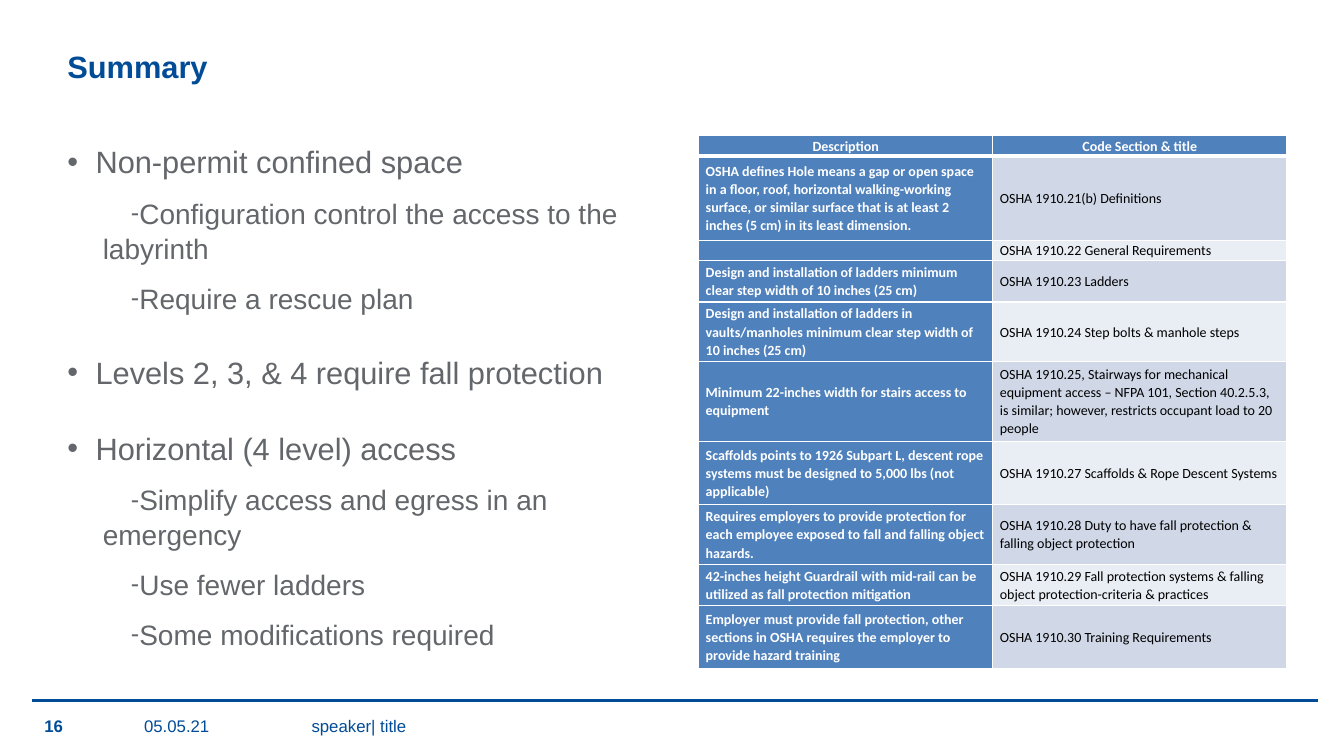
from lxml.etree import SubElement
from pptx import Presentation
from pptx.dml.color import RGBColor
from pptx.enum.shapes import MSO_CONNECTOR as Connector
from pptx.enum.text import MSO_ANCHOR as Anchor, PP_ALIGN as Align
from pptx.oxml.ns import qn
from pptx.util import Cm, Pt

NAVY, GRAY, WHITE, BLACK = "004C97", "63666A", "FFFFFF", "000000"
TABLE_BLUE, BANDS = "4F81BD", ("D0D8E8", "E9EDF4")

SUMMARY = [
    ("Non-permit confined space", [
        "Configuration control the access to the labyrinth",
        "Require a rescue plan"]),
    ("Levels 2, 3, & 4 require fall protection", []),
    ("Horizontal (4 level) access", [
        "Simplify access and egress in an emergency",
        "Use fewer ladders",
        "Some modifications required"]),
]

HEADINGS = ("Description", "Code Section & title")
CODES = [
    ("OSHA defines Hole means a gap or open space in a floor, roof, horizontal "
     "walking-working surface, or similar surface that is at least 2 inches (5 cm) "
     "in its least dimension.", "OSHA 1910.21(b) Definitions"),
    ("", "OSHA 1910.22 General Requirements"),
    ("Design and installation of ladders minimum clear step width of 10 inches (25 cm)",
     "OSHA 1910.23 Ladders"),
    ("Design and installation of ladders in vaults/manholes minimum clear step width "
     "of 10 inches (25 cm)", "OSHA 1910.24 Step bolts & manhole steps"),
    ("Minimum 22-inches width for stairs access to equipment",
     "OSHA 1910.25, Stairways for mechanical equipment access – NFPA 101, Section "
     "40.2.5.3, is similar; however, restricts occupant load to 20 people"),
    ("Scaffolds points to 1926 Subpart L, descent rope systems must be designed to "
     "5,000 lbs (not applicable)", "OSHA 1910.27 Scaffolds & Rope Descent Systems"),
    ("Requires employers to provide protection for each employee exposed to fall and "
     "falling object hazards.",
     "OSHA 1910.28 Duty to have fall protection & falling object protection"),
    ("42-inches height Guardrail with mid-rail can be utilized as fall protection "
     "mitigation",
     "OSHA 1910.29 Fall protection systems & falling object protection-criteria & "
     "practices"),
    ("Employer must provide fall protection, other sections in OSHA requires the "
     "employer to provide hazard training", "OSHA 1910.30 Training Requirements"),
]
ROW_HEIGHTS = (0.51, 2.13, 0.51, 1.04, 1.5, 2.01, 1.6, 1.5, 1.04, 1.6)


def rgb(code):
    return RGBColor.from_string(code)


class SlideWriter:
    font = "Arial"
    table_font = "Calibri"

    def __init__(self, slide):
        self.slide = slide

    def run(self, paragraph, text, size, color, bold=False, font=None):
        run = paragraph.add_run()
        run.text = text
        run.font.name = font or self.font
        run.font.size = Pt(size)
        run.font.bold = bold
        run.font.color.rgb = rgb(color)

    def frame(self, shape, anchor, inset=0):
        """Fix wrapping, anchor and vertical insets; return the text frame."""
        frame = shape.text_frame
        frame.word_wrap = True
        frame.vertical_anchor = anchor
        frame.margin_left = frame.margin_right = 0
        frame.margin_top = frame.margin_bottom = Cm(inset)
        return frame

    def title(self, text, left, top, width, height):
        title = self.slide.shapes.title
        title.left, title.top, title.width, title.height = map(
            Cm, (left, top, width, height))
        paragraph = self.frame(title, Anchor.TOP).paragraphs[0]
        paragraph.alignment = Align.LEFT
        self.run(paragraph, text, 22, NAVY, bold=True)

    def footer(self, text, left, width, bold=False):
        box = self.slide.shapes.add_textbox(Cm(left), Cm(18.03), Cm(width), Cm(0.51))
        self.run(self.frame(box, Anchor.BOTTOM).paragraphs[0], text, 12, NAVY, bold)

    def rule(self, left, right, y):
        line = self.slide.shapes.add_connector(
            Connector.STRAIGHT, Cm(left), Cm(y), Cm(right), Cm(y))
        line.line.color.rgb = rgb(NAVY)
        line.line.width = Pt(2)
        SubElement(line._element.spPr, qn("a:effectLst"))

    def bullet(self, paragraph, char, margin, indent, scale=100):
        props = paragraph._p.get_or_add_pPr()
        props.set("marL", str(Cm(margin)))
        props.set("indent", str(Cm(indent)))
        SubElement(props, qn("a:buSzPct"), val=str(scale * 1000))
        SubElement(props, qn("a:buFont"), typeface=self.font)
        SubElement(props, qn("a:buChar"), char=char)

    def outline(self, topics, left, top, width, height):
        box = self.slide.shapes.add_textbox(Cm(left), Cm(top), Cm(width), Cm(height))
        frame = self.frame(box, Anchor.TOP, inset=0.13)
        for number, (topic, points) in enumerate(topics):
            heading = frame.add_paragraph() if number else frame.paragraphs[0]
            heading.line_spacing = 1.05
            heading.space_before = Pt(26.5 if number else 0)
            self.bullet(heading, "•", 0.71, -0.73)
            self.run(heading, topic, 22, GRAY)
            for point in points:
                detail = frame.add_paragraph()
                detail.level = 1
                detail.line_spacing = 1.05
                detail.space_before = Pt(10.3)
                self.bullet(detail, "-", 0.89, 0.71, scale=90)
                self.run(detail, point, 20, GRAY)

    def borders(self, cell, bottom):
        props = cell._tc.get_or_add_tcPr()
        for side, width in (("L", 1), ("R", 1), ("T", 1), ("B", bottom)):
            edge = SubElement(props, qn(f"a:ln{side}"), w=str(Pt(width)))
            fill = SubElement(edge, qn("a:solidFill"))
            SubElement(fill, qn("a:srgbClr"), val=WHITE)

    def cell(self, cell, text, fill, color, bold, align=Align.LEFT, bottom=1):
        self.borders(cell, bottom)
        cell.fill.solid()
        cell.fill.fore_color.rgb = rgb(fill)
        cell.vertical_anchor = Anchor.MIDDLE
        cell.margin_left = cell.margin_right = Cm(0.18)
        cell.margin_top = cell.margin_bottom = 0
        paragraph = cell.text_frame.paragraphs[0]
        paragraph.alignment = align
        paragraph.line_spacing = 1.07
        if text:
            self.run(paragraph, text, 10, color, bold, self.table_font)
        else:
            SubElement(paragraph._p, qn("a:endParaRPr"), sz="1000")

    def code_table(self, left, top, column_width):
        table = self.slide.shapes.add_table(
            len(ROW_HEIGHTS), 2, Cm(left), Cm(top),
            Cm(2 * column_width), Cm(sum(ROW_HEIGHTS))).table
        for column in table.columns:
            column.width = Cm(column_width)
        for row, height in zip(table.rows, ROW_HEIGHTS):
            row.height = Cm(height)
        for col, heading in enumerate(HEADINGS):
            self.cell(table.cell(0, col), heading, TABLE_BLUE, WHITE, True,
                      Align.CENTER, bottom=3)
        for row, (description, section) in enumerate(CODES, 1):
            self.cell(table.cell(row, 0), description, TABLE_BLUE, WHITE, True)
            self.cell(table.cell(row, 1), section, BANDS[(row - 1) % 2], BLACK, False)


def main():
    deck = Presentation()
    deck.slide_width, deck.slide_height = Cm(33.86), Cm(19.05)
    writer = SlideWriter(deck.slides.add_slide(deck.slide_layouts[5]))
    writer.rule(0.8, 33.2, 17.65)
    writer.title("Summary", 1.7, 1.2, 30.7, 1.52)
    writer.footer("speaker| title", 7.85, 20.37)
    writer.footer("16", 1.12, 1.96, bold=True)
    writer.outline(SUMMARY, 1.7, 3.43, 14.8, 13.46)
    writer.footer("05.05.21", 3.63, 3.76)
    writer.code_table(17.6, 3.42, 7.41)
    deck.save("out.pptx")


if __name__ == "__main__":
    main()
